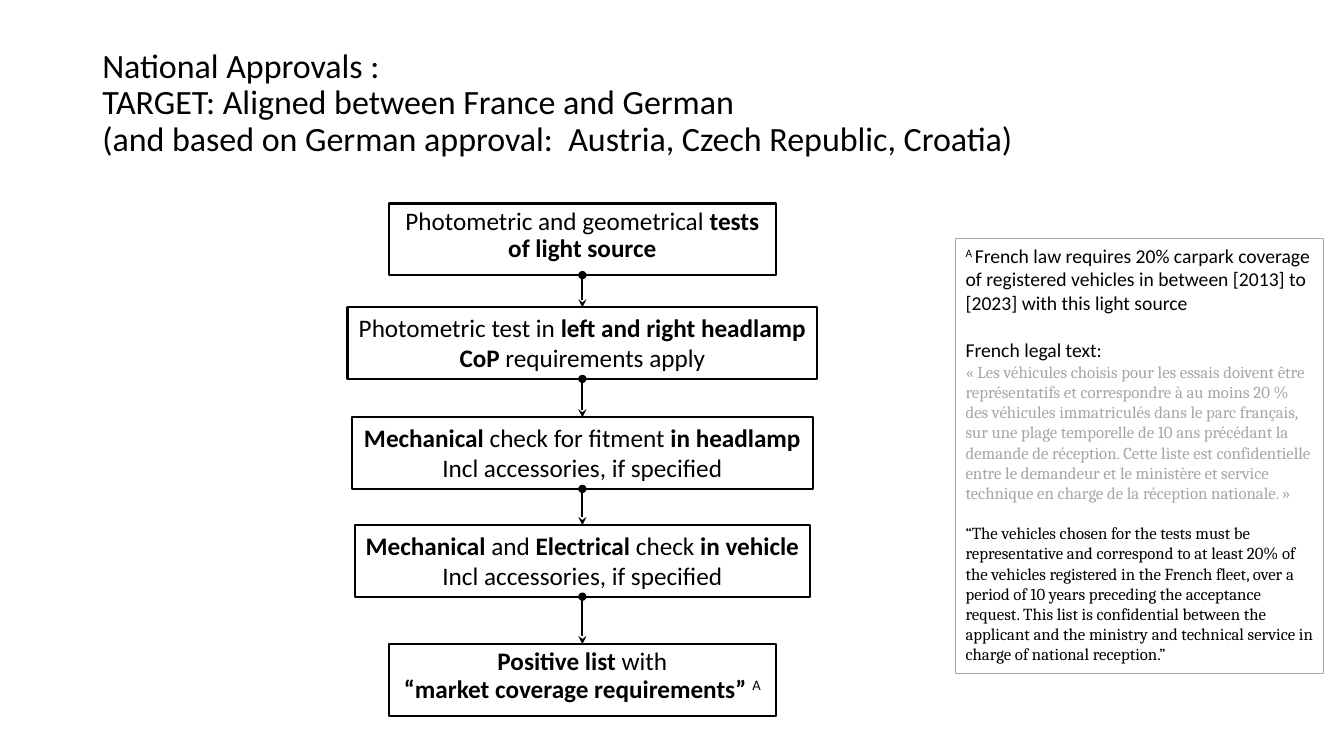
from itertools import pairwise

from lxml.etree import SubElement
from pptx import Presentation
from pptx.dml.color import RGBColor
from pptx.enum.shapes import MSO_CONNECTOR, MSO_SHAPE
from pptx.enum.text import MSO_ANCHOR, PP_ALIGN
from pptx.oxml.ns import qn
from pptx.util import Pt

BLACK = RGBColor(0x00, 0x00, 0x00)
GRAY = RGBColor(0xA6, 0xA6, 0xA6)

FLOW_CENTER = 416
STEP_HEIGHT = 51.1
STEPS = [
    (145.4, 276.5, 0.9, ["Photometric and geometrical *tests of light source*"]),
    (219.6, 335.5, 1, ["Photometric test in *left and right headlamp*",
                       "*CoP* requirements apply"]),
    (298.1, 329, 1, ["*Mechanical* check for fitment *in headlamp*",
                     "Incl accessories, if specified"]),
    (375.1, 325.4, 1, ["*Mechanical* and *Electrical* check *in vehicle*",
                       "Incl accessories, if specified"]),
    (460.1, 276.5, 0.9, ["*Positive list *with\n*“market coverage requirements” *^A^"]),
]

TITLE = (
    "National Approvals : \n"
    "TARGET: Aligned between France and German \n"
    "(and based on German approval:  Austria, Czech Republic, Croatia)"
)
FRENCH_RULE = (
    "^A ^French law requires 20% carpark coverage of registered vehicles "
    "in between [2013] to [2023] with this light source"
)
LEGAL_TEXT = (
    "« Les véhicules choisis pour les essais doivent être représentatifs et "
    "correspondre à au moins 20 % des véhicules immatriculés dans le parc français, "
    "sur une plage temporelle de 10 ans précédant la demande de réception. "
    "Cette liste est confidentielle entre le demandeur et le ministère et service "
    "technique en charge de la réception nationale. »"
)
TRANSLATION = (
    "“The vehicles chosen for the tests must be representative and correspond to "
    "at least 20% of the vehicles registered in the French fleet, over a period of "
    "10 years preceding the acceptance request. This list is confidential between "
    "the applicant and the ministry and technical service in charge of national "
    "reception.”"
)


def add_text(frame, text, size=18, font="Calibri", color=BLACK,
             align=PP_ALIGN.LEFT, spacing=1, before=0):
    paragraph = frame.paragraphs[0]
    if paragraph.runs:
        paragraph = frame.add_paragraph()
    paragraph.alignment = align
    paragraph.line_spacing = spacing
    paragraph.space_before = Pt(before)
    for line_index, line in enumerate(text.split("\n")):
        if line_index:
            paragraph.add_line_break()
        for bold_index, weighted in enumerate(line.split("*")):
            for raised_index, words in enumerate(weighted.split("^")):
                if not words:
                    continue
                run = paragraph.add_run()
                run.text = words
                run.font.size = Pt(size)
                run.font.name = font
                run.font.color.rgb = color
                run.font.bold = bold_index % 2 == 1
                if raised_index % 2:
                    run.font._element.set("baseline", "30000")


def add_box(slide, left, top, width, height, line_color, line_width):
    box = slide.shapes.add_shape(
        MSO_SHAPE.RECTANGLE, Pt(left), Pt(top), Pt(width), Pt(height))
    box.shadow.inherit = False
    box.fill.background()
    box.line.color.rgb = line_color
    box.line.width = Pt(line_width)
    box.text_frame.word_wrap = True
    box.text_frame.vertical_anchor = MSO_ANCHOR.TOP
    return box.text_frame


def add_title(slide):
    title = slide.shapes.add_textbox(Pt(66), Pt(28.8), Pt(845), Pt(90.7)).text_frame
    title.word_wrap = True
    title.vertical_anchor = MSO_ANCHOR.MIDDLE
    add_text(title, TITLE, size=24.3, spacing=0.9)


def add_step(slide, top, width, spacing, lines):
    step = add_box(slide, FLOW_CENTER - width / 2, top, width, STEP_HEIGHT, BLACK, 1.5)
    step.word_wrap = len(lines) == 1
    for line in lines:
        add_text(step, line, align=PP_ALIGN.CENTER, spacing=spacing)


def add_arrow(slide, start, end):
    arrow = slide.shapes.add_connector(
        MSO_CONNECTOR.STRAIGHT, Pt(FLOW_CENTER), Pt(start), Pt(FLOW_CENTER), Pt(end))
    arrow.line.color.rgb = BLACK
    arrow.line.width = Pt(1.5)
    outline = arrow.line._get_or_add_ln()
    SubElement(outline, qn("a:headEnd"), type="oval")
    SubElement(outline, qn("a:tailEnd"), type="stealth")
    SubElement(arrow._element.spPr, qn("a:effectLst"))


def add_legal_note(slide):
    note = add_box(slide, 682.6, 170.6, 262.8, 310.3, GRAY, 0.75)
    add_text(note, FRENCH_RULE, size=14)
    add_text(note, "French legal text:", size=14, before=17)
    add_text(note, LEGAL_TEXT, size=12, font="Cambria", color=GRAY)
    add_text(note, TRANSLATION, size=12, font="Cambria", before=14.4)


def main():
    presentation = Presentation()
    presentation.slide_width = Pt(960)
    presentation.slide_height = Pt(540)
    slide = presentation.slides.add_slide(presentation.slide_layouts[6])
    add_title(slide)
    for step in STEPS:
        add_step(slide, *step)
    for upper, lower in pairwise(STEPS):
        add_arrow(slide, upper[0] + STEP_HEIGHT, lower[0])
    add_legal_note(slide)
    presentation.save("out.pptx")


if __name__ == "__main__":
    main()
